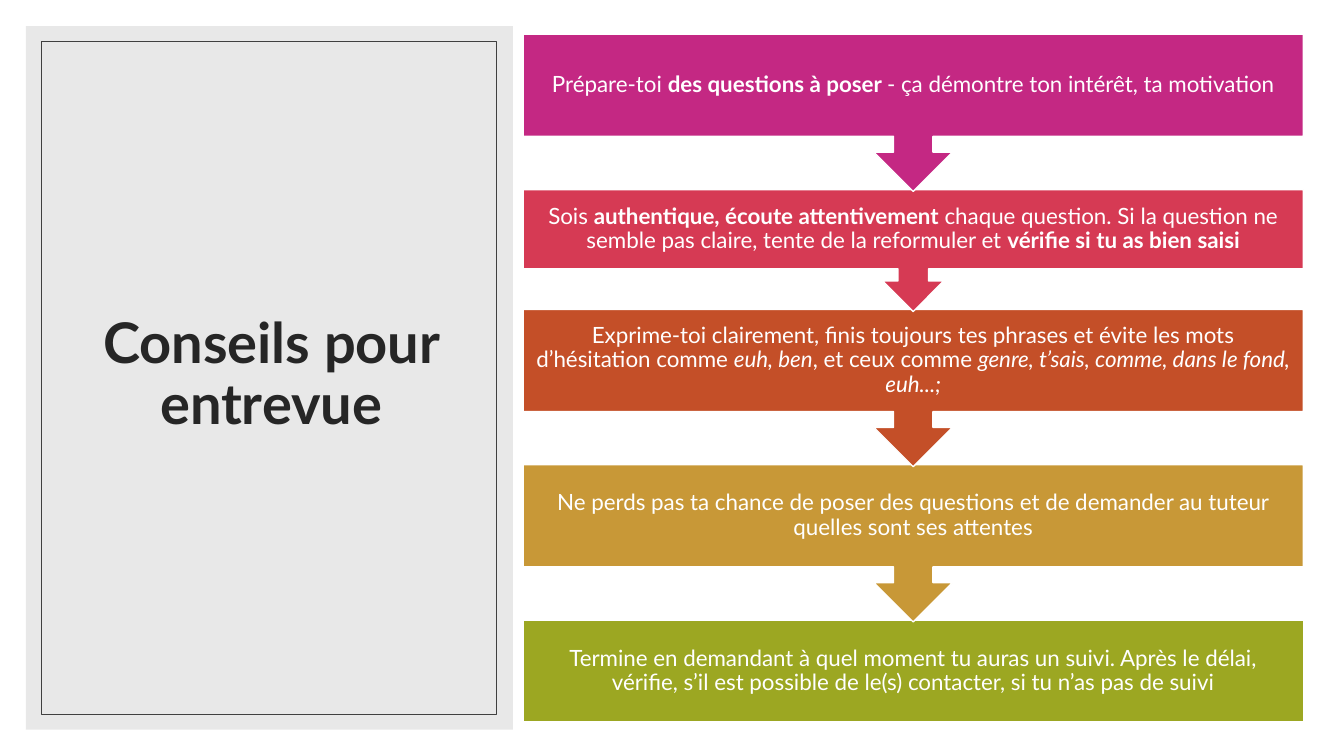
from dataclasses import dataclass

import pptx
import pptx.dml.color
import pptx.enum.shapes
import pptx.enum.text
import pptx.oxml.ns
import pptx.util
from lxml import etree

Pt = pptx.util.Pt
RGB = pptx.dml.color.RGBColor.from_string
Shape = pptx.enum.shapes.MSO_SHAPE


@dataclass(frozen=True)
class Theme:
    font: str = "Lato"
    title_size: float = 40
    step_size: float = 16
    title_color: str = "262626"
    panel: str = "D9D9D9"
    frame: str = "404040"
    white: str = "FFFFFF"


@dataclass(frozen=True)
class Run:
    text: str
    bold: bool = False
    italic: bool = False


@dataclass(frozen=True)
class Box:
    left: float
    top: float
    width: float
    height: float


@dataclass(frozen=True)
class Step:
    color: str
    height: float
    runs: tuple[Run, ...]
    shape: Shape = Shape.DOWN_ARROW_CALLOUT


THEME = Theme()
PANEL = Box(18.6, 18.6, 347.8, 502.6)
FRAME = Box(29.5, 29.5, 324.7, 481)
TITLE = Box(45.4, 43.9, 296.6, 449.3)
STEPS_LEFT, STEPS_TOP, STEPS_WIDTH = 373.7, 24.5, 557.3
OVERLAP = 1.4
TALL, SHORT, LAST = 112.3, 87.1, 72.7

STEPS = (
    Step("C42883", TALL, (
        Run("Prépare-toi "),
        Run("des questions à poser ", bold=True),
        Run("- ça démontre ton intérêt, ta motivation"),
    )),
    Step("D63A54", SHORT, (
        Run("Sois "),
        Run("authentique, écoute attentivement ", bold=True),
        Run("chaque question. Si la question ne semble pas claire, "
            "tente de la reformuler et "),
        Run("vérifie si tu as bien saisi", bold=True),
    )),
    Step("C44F28", TALL, (
        Run("Exprime-toi clairement, finis toujours tes phrases et évite "
            "les mots d’hésitation comme "),
        Run("euh, ben", italic=True),
        Run(", et ceux comme "),
        Run("genre, t’sais, comme, dans le fond, euh...;", italic=True),
    )),
    Step("C89837", TALL, (
        Run("Ne perds pas ta chance de poser des questions et de demander "
            "au tuteur quelles sont ses attentes"),
    )),
    Step("9CA722", LAST, (
        Run("Termine en demandant à quel moment tu auras un suivi. Après le "
            "délai, vérifie, s’il est possible de le(s) contacter, si tu "
            "n’as pas de suivi"),
    ), Shape.RECTANGLE),
)


def add_shape(s, kind: Shape, box: Box, fill: str | None = None,
              line: str | None = None, line_width: float = 1):
    sp = s.shapes.add_shape(kind, Pt(box.left), Pt(box.top),
                            Pt(box.width), Pt(box.height))
    sp.shadow.inherit = False
    if fill:
        sp.fill.solid()
        sp.fill.fore_color.rgb = RGB(fill)
    else:
        sp.fill.background()
    if line:
        sp.line.color.rgb = RGB(line)
        sp.line.width = Pt(line_width)
    else:
        sp.line.fill.background()
    return sp


def set_opacity(sp, percent: int) -> None:
    qn = pptx.oxml.ns.qn
    color = sp.element.spPr.find(qn("a:solidFill")).find(qn("a:srgbClr"))
    etree.SubElement(color, qn("a:alpha"), val=str(percent * 1000))


def write_centered(tf, runs: tuple[Run, ...], size: float, color: str) -> None:
    tf.word_wrap = True
    tf.auto_size = pptx.enum.text.MSO_AUTO_SIZE.NONE
    tf.vertical_anchor = pptx.enum.text.MSO_ANCHOR.MIDDLE
    p = tf.paragraphs[0]
    p.alignment = pptx.enum.text.PP_ALIGN.CENTER
    p.line_spacing = 0.9
    for run in runs:
        r = p.add_run()
        r.text = run.text
        r.font.name = THEME.font
        r.font.size = Pt(size)
        r.font.bold = run.bold
        r.font.italic = run.italic
        r.font.color.rgb = RGB(color)


def add_title_panel(s) -> None:
    title = s.shapes.title
    title.left, title.top = Pt(TITLE.left), Pt(TITLE.top)
    title.width, title.height = Pt(TITLE.width), Pt(TITLE.height)
    write_centered(title.text_frame, (Run("Conseils pour entrevue", bold=True),),
                   THEME.title_size, THEME.title_color)
    panel = add_shape(s, Shape.RECTANGLE, PANEL, fill=THEME.panel)
    set_opacity(panel, 60)
    title.element.addprevious(panel.element)
    add_shape(s, Shape.RECTANGLE, FRAME, line=THEME.frame, line_width=0.5)


def add_steps(s) -> None:
    """Stack the steps from the bottom up, so each arrow tip lies on the next box."""
    bottom = STEPS_TOP + sum(step.height - OVERLAP for step in STEPS) + OVERLAP
    for step in reversed(STEPS):
        top = bottom - step.height
        sp = add_shape(s, step.shape,
                       Box(STEPS_LEFT, top, STEPS_WIDTH, step.height),
                       fill=step.color, line=THEME.white)
        tf = sp.text_frame
        tf.margin_left = tf.margin_right = Pt(8.6)
        tf.margin_top = tf.margin_bottom = Pt(8.6)
        write_centered(tf, step.runs, THEME.step_size, THEME.white)
        bottom = top + OVERLAP


def main() -> None:
    prs = pptx.Presentation()
    prs.slide_width, prs.slide_height = Pt(960), Pt(540)
    s = prs.slides.add_slide(prs.slide_layouts.get_by_name("Title Only"))
    add_title_panel(s)
    add_steps(s)
    prs.save("out.pptx")


if __name__ == "__main__":
    main()
